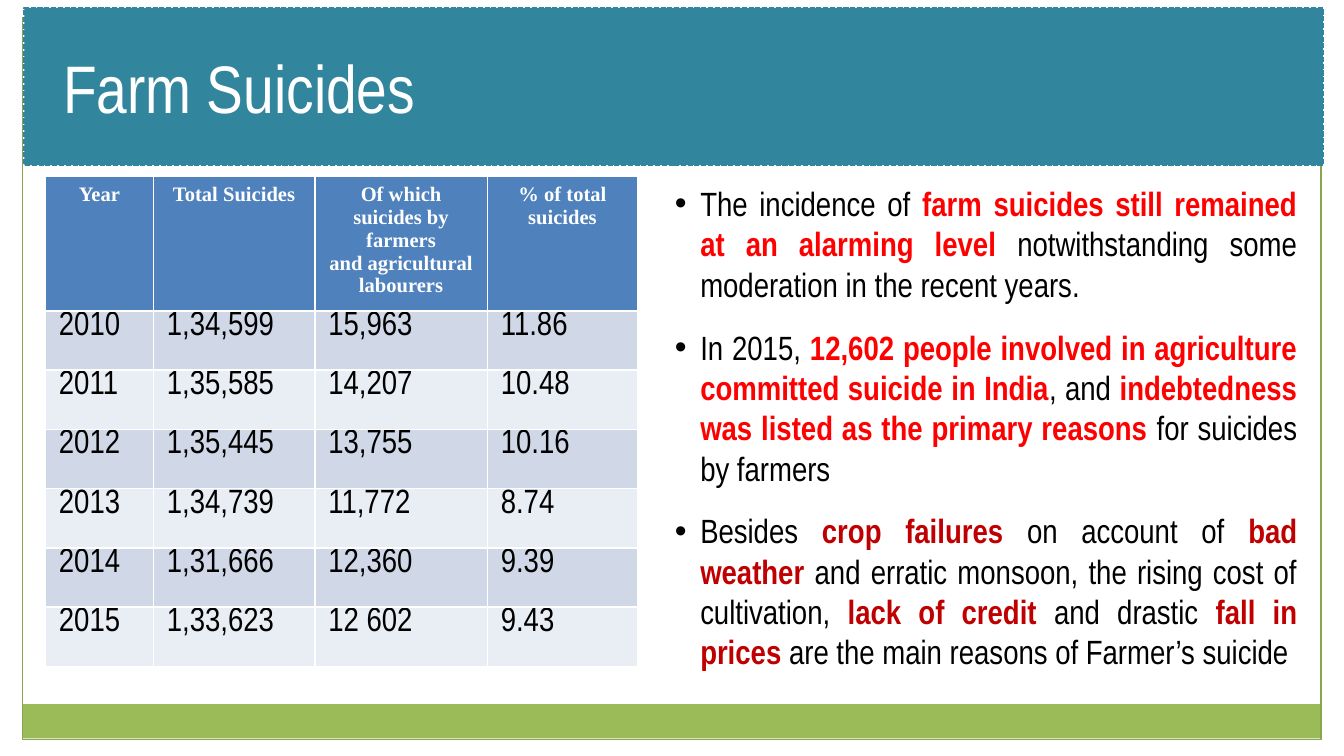
from pptx import Presentation
from pptx.dml.color import RGBColor
from pptx.enum.dml import MSO_LINE
from pptx.enum.shapes import MSO_SHAPE as Shape
from pptx.enum.text import MSO_ANCHOR as Anchor, MSO_AUTO_SIZE as AutoSize, PP_ALIGN as Align
from pptx.util import Cm, Pt

COLORS = {
    "white": "FFFFFF", "black": "000000", "teal": "31859C",
    "green": "9BBB59", "frame": "89A54F", "header": "4F81BD",
    "dark band": "D0D8E8", "light band": "E9EDF4",
    "red": "FF0000", "dark red": "C00000",
}
NARROW, SERIF = "Arial Narrow", "Times New Roman"
INDENT = Cm(0.48)

TITLE = "Farm Suicides"
HEADERS = ["Year", "Total Suicides",
           "Of which suicides by farmers\nand agricultural labourers",
           "% of total suicides"]
ROWS = [
    ("2010", "1,34,599", "15,963", "11.86"),
    ("2011", "1,35,585", "14,207", "10.48"),
    ("2012", "1,35,445", "13,755", "10.16"),
    ("2013", "1,34,739", "11,772", "8.74"),
    ("2014", "1,31,666", "12,360", "9.39"),
    ("2015", "1,33,623", "12 602", "9.43"),
]
COLUMN_WIDTHS = [2.04, 3.05, 3.26, 2.84]
HEADER_HEIGHT, ROW_HEIGHT = 2.54, 1.12

# Each point is a list of (text, colour); coloured text is bold.
POINTS = [
    [("The incidence of ", "black"),
     ("farm suicides still remained at an alarming level", "red"),
     (" notwithstanding some moderation in the recent years.", "black")],
    [("In 2015, ", "black"),
     ("12,602 people involved in agriculture committed suicide in India", "red"),
     (", and ", "black"),
     ("indebtedness was listed as the primary reasons ", "red"),
     ("for suicides by farmers", "black")],
    [("Besides ", "black"), ("crop failures ", "dark red"),
     ("on account of ", "black"), ("bad weather ", "dark red"),
     ("and erratic monsoon, the rising cost of cultivation, ", "black"),
     ("lack of credit ", "dark red"), ("and drastic ", "black"),
     ("fall in prices", "dark red"),
     (" are the main reasons of Farmer’s suicide", "black")],
]


def color(name):
    return RGBColor.from_string(COLORS[name])


def fill(target, name):
    target.fill.solid()
    target.fill.fore_color.rgb = color(name)


def place(shape, left, top, width, height):
    shape.left, shape.top = Cm(left), Cm(top)
    shape.width, shape.height = Cm(width), Cm(height)


def add_run(paragraph, text, size, font, color_name, bold=False):
    run = paragraph.add_run()
    run.text = text
    run.font.size, run.font.name, run.font.bold = Pt(size), font, bold
    run.font.color.rgb = color(color_name)


def paragraph_at(frame, index):
    return frame.add_paragraph() if index else frame.paragraphs[0]


def add_rectangle(slide, left, top, width, height):
    shape = slide.shapes.add_shape(
        Shape.RECTANGLE, Cm(left), Cm(top), Cm(width), Cm(height))
    shape.shadow.inherit = False
    return shape


def add_frame(slide):
    band = add_rectangle(slide, 0.42, 13.3, 24.53, 0.65)
    fill(band, "green")
    band.line.fill.background()
    border = add_rectangle(slide, 0.43, 0.33, 24.54, 13.64)
    border.fill.background()
    border.line.color.rgb = color("frame")
    border.line.width = Pt(0.75)


def add_suicide_table(slide):
    height = HEADER_HEIGHT + ROW_HEIGHT * len(ROWS)
    table = slide.shapes.add_table(
        len(ROWS) + 1, len(HEADERS), Cm(0.86), Cm(3.33),
        Cm(sum(COLUMN_WIDTHS)), Cm(height)).table
    for column, width in zip(table.columns, COLUMN_WIDTHS):
        column.width = Cm(width)
    for row_index, values in enumerate([HEADERS, *ROWS]):
        is_header = row_index == 0
        table.rows[row_index].height = Cm(HEADER_HEIGHT if is_header else ROW_HEIGHT)
        band = "header" if is_header else "dark band" if row_index % 2 else "light band"
        for column_index, value in enumerate(values):
            cell = table.cell(row_index, column_index)
            fill(cell, band)
            if not is_header:
                cell.margin_top = cell.margin_bottom = 0
            for index, line in enumerate(value.split("\n")):
                paragraph = paragraph_at(cell.text_frame, index)
                if is_header:
                    paragraph.alignment = Align.CENTER
                    add_run(paragraph, line, 11, SERIF, "white", bold=True)
                else:
                    add_run(paragraph, line, 18, NARROW, "black")


def format_title(title):
    place(title, 0.46, 0.15, 24.54, 2.97)
    fill(title, "teal")
    title.line.color.rgb = color("teal")
    title.line.width = Pt(0.9)
    title.line.dash_style = MSO_LINE.SQUARE_DOT
    frame = title.text_frame
    frame.auto_size, frame.vertical_anchor = AutoSize.NONE, Anchor.MIDDLE
    paragraph = frame.paragraphs[0]
    paragraph.alignment = Align.LEFT
    paragraph._p.get_or_add_pPr().set("marL", str(INDENT))
    add_run(paragraph, TITLE, 36, NARROW, "white")


def format_body(body):
    place(body, 12.5, 3.33, 12.27, 8.81)
    frame = body.text_frame
    frame.auto_size = AutoSize.NONE
    for index, point in enumerate(POINTS):
        paragraph = paragraph_at(frame, index)
        paragraph.alignment = Align.JUSTIFY
        paragraph.space_before = paragraph.space_after = Pt(6)
        properties = paragraph._p.get_or_add_pPr()
        properties.set("marL", str(INDENT))
        properties.set("indent", str(-INDENT))
        for text, color_name in point:
            add_run(paragraph, text, 18, NARROW, color_name, bold=color_name != "black")


def main():
    presentation = Presentation()
    presentation.slide_width, presentation.slide_height = Cm(25.4), Cm(14.28)
    slide = presentation.slides.add_slide(presentation.slide_layouts[1])
    title, body = slide.shapes.title, slide.placeholders[1]
    add_frame(slide)
    add_suicide_table(slide)
    format_title(title)
    format_body(body)
    for placeholder in (title, body):  # bring in front of the frame
        slide.shapes._spTree.append(placeholder._element)
    presentation.save("out.pptx")


if __name__ == "__main__":
    main()
